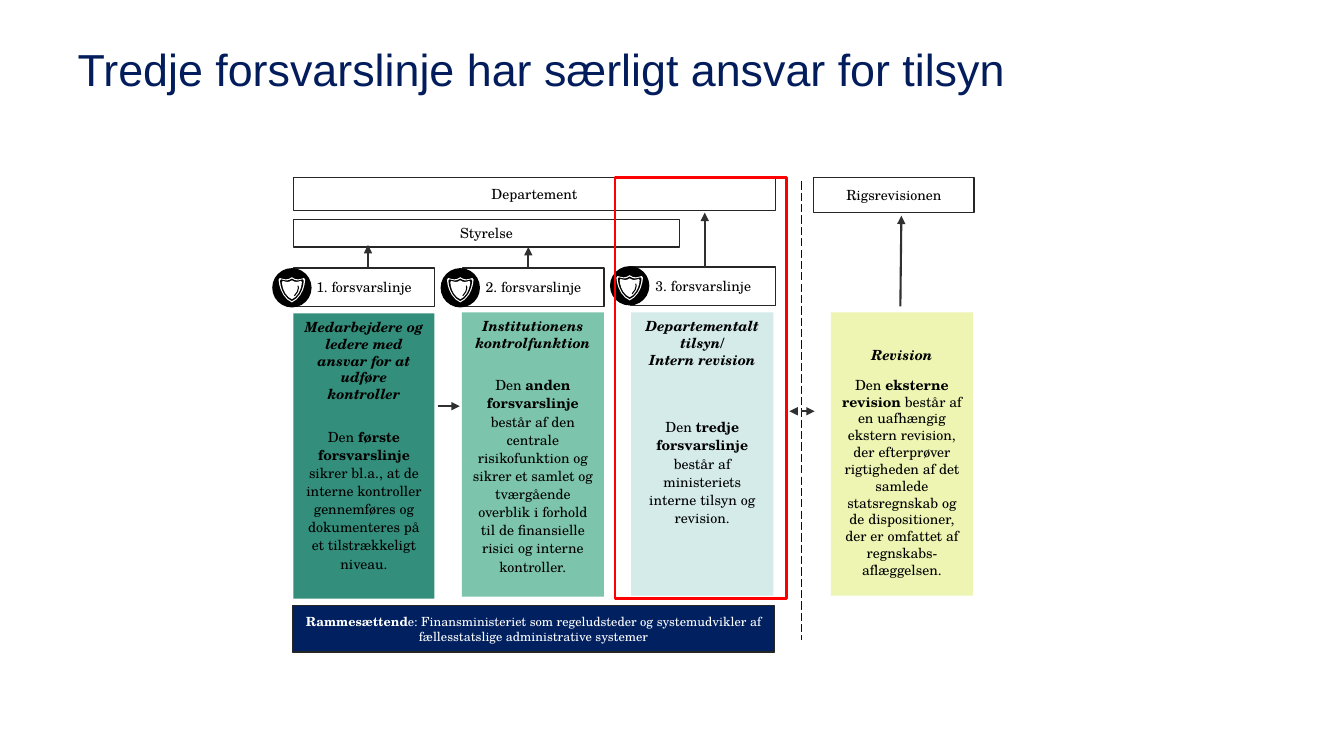
from lxml import etree
from pptx import Presentation
from pptx.dml.color import RGBColor
from pptx.enum import dml, shapes, text
from pptx.oxml.ns import qn
from pptx.util import Inches, Pt

# Content: places are left, top, width, height in inches
TITLE = "Tredje forsvarslinje har særligt ansvar for tilsyn"
AUTHORITIES = [
    ("Departement", (2.91, 1.76, 4.78, 0.33)),
    ("Styrelse", (2.91, 2.18, 3.83, 0.27)),
    ("Rigsrevisionen", (8.07, 1.76, 1.59, 0.35)),
]
DEFENCE_LINES = [
    ("1. forsvarslinje", (2.91, 2.66, 1.4, 0.38), (2.7, 2.66)),
    ("2. forsvarslinje", (4.59, 2.66, 1.4, 0.38), (4.37, 2.66)),
    ("3. forsvarslinje", (6.26, 2.65, 1.43, 0.38), (6.05, 2.64)),
]
# Heading, body runs, place, fill, top inset, gap in points, line spacing
COLUMNS = [
    ("Medarbejdere og ledere med ansvar for at udføre kontroller",
     ("Den ", "første forsvarslinje",
      " sikrer bl.a., at de interne kontroller gennemføres og dokumenteres "
      "på et tilstrækkeligt niveau."),
     (2.91, 3.11, 1.4, 2.83), "first", 0.05, 17.4, 1.08),
    ("Institutionens kontrolfunktion",
     ("Den ", "anden forsvarslinje ",
      "består af den centrale risikofunktion og sikrer et samlet og tværgående "
      "overblik i forhold til de finansielle risici og interne kontroller."),
     (4.58, 3.1, 1.41, 2.82), "second", 0.05, 17.4, 1.08),
    ("Departementalt tilsyn/\nIntern revision",
     ("Den ", "tredje forsvarslinje ",
      "består af ministeriets interne tilsyn og revision."),
     (6.26, 3.1, 1.41, 2.81), "third", 0.05, 35.4, 1.08),
    ("Revision",
     ("Den ", "eksterne revision ",
      "består af en uafhængig ekstern revision, der efterprøver rigtigheden af "
      "det samlede statsregnskab og de dispositioner, der er omfattet af "
      "regnskabs-aflæggelsen."),
     (8.24, 3.1, 1.41, 2.81), "external", 0.34, 9, 1.0),
]
FRAMEWORK = ("Rammesættend", "e: Finansministeriet som regeludsteder og systemudvikler "
             "af fællesstatslige administrative systemer")
FRAMEWORK_PLACE = (2.9, 6.01, 4.78, 0.46)
HIGHLIGHT_PLACE = (6.1, 1.76, 1.7, 4.18)
# Start, end, dash, arrowheads
ARROWS = [
    ((3.65, 2.66), (3.65, 2.43), None, ("tailEnd",)),
    ((5.24, 2.66), (5.24, 2.45), None, ("tailEnd",)),
    ((6.99, 2.65), (6.99, 2.11), None, ("tailEnd",)),
    ((8.93, 3.04), (8.94, 2.14), None, ("tailEnd",)),
    ((4.34, 4.03), (4.56, 4.03), None, ("tailEnd",)),
    ((8.08, 4.08), (7.83, 4.08), dml.MSO_LINE.SQUARE_DOT, ("headEnd", "tailEnd")),
]
DIVIDER = ((7.95, 1.8), (7.95, 6.35))
DISC = 0.39
# Right half of the shield, from its centre, top to bottom
SHIELD = [(0, -0.125), (0.03, -0.108), (0.06, -0.103), (0.09, -0.108), (0.12, -0.117),
          (0.132, -0.1), (0.125, -0.05), (0.11, 0), (0.085, 0.05), (0.045, 0.097),
          (0, 0.125)]
GLINT = [(0.06, -0.04), (0.065, -0.02), (0.055, 0.02), (0.025, 0.06)]

THEME = {
    "title_font": "Arial", "font": "TeX Gyre Schola",
    "title_size": 32, "size": 10, "small": 9,
    "title": "031D5C", "black": "000000", "white": "FFFFFF", "edge": "262626",
    "arrow": "303030", "divider": "0D0D0D", "navy": "002060", "red": "FF0000",
    "first": "00725C", "second": "7CC4AC", "third": "D4EBEA", "external": "EEF5B2",
}


def color(name):
    return RGBColor.from_string(THEME[name])


def assign(target, values):
    for name, value in values.items():
        setattr(target, name, value)


def paint(shape, fill=None, edge=None, width=1):
    shape.shadow.inherit = False
    if fill:
        shape.fill.solid()
        shape.fill.fore_color.rgb = color(fill)
    else:
        shape.fill.background()
    if edge:
        shape.line.color.rgb = color(edge)
        shape.line.width = Pt(width)
    else:
        shape.line.fill.background()
    return shape


def add_box(place, fill=None, edge=None, width=1, kind=shapes.MSO_SHAPE.RECTANGLE):
    box = slide.shapes.add_shape(kind, *map(Inches, place))
    return paint(box, fill, edge, width)


def write(paragraph, runs, ink="black", size="size", **spacing):
    """Each run is (wording, bold, italic)."""
    assign(paragraph, {"alignment": text.PP_ALIGN.CENTER, **spacing})
    for wording, bold, italic in runs:
        for number, line in enumerate(wording.split("\n")):
            if number:
                paragraph.add_line_break()
            run = paragraph.add_run()
            run.text = line
            assign(run.font, {"name": THEME["font"], "size": Pt(THEME[size]),
                              "bold": bold, "italic": italic})
            run.font.color.rgb = color(ink)


def add_label(place, runs, fill=None, **style):
    frame = add_box(place, fill, "edge").text_frame
    assign(frame, {"word_wrap": True, "vertical_anchor": text.MSO_ANCHOR.MIDDLE})
    write(frame.paragraphs[0], runs, **style)


def add_line(start, end, ink, width, dash=None, heads=()):
    line = slide.shapes.add_connector(shapes.MSO_CONNECTOR.STRAIGHT,
                                      *map(Inches, start + end))
    line.line.color.rgb = color(ink)
    assign(line.line, {"width": Pt(width), "dash_style": dash})
    for head in heads:
        etree.SubElement(line.line._get_or_add_ln(), qn("a:" + head), type="triangle")
    etree.SubElement(line._element.spPr, qn("a:effectLst"))


def add_outline(points, centre, closed):
    spots = [(Inches(centre[0] + x), Inches(centre[1] + y)) for x, y in points]
    builder = slide.shapes.build_freeform(*spots[0])
    builder.add_line_segments(spots[1:], close=closed)
    return builder.convert_to_shape()


def add_shield(left, top):
    add_box((left, top, DISC, DISC), "black", kind=shapes.MSO_SHAPE.OVAL)
    centre = (left + DISC / 2, top + DISC / 2 + 0.02)
    whole = SHIELD + [(-x, y) for x, y in SHIELD[-2:0:-1]]
    for scale, fill in ((1, "white"), (0.89, "black"), (0.75, "white")):
        layer = [(x * scale, y * scale) for x, y in whole]
        paint(add_outline(layer, centre, True), fill)
    paint(add_outline(GLINT, centre, False), None, "black", 0.75)


prs = Presentation()
assign(prs, {"slide_width": Inches(13.33), "slide_height": Inches(7.5)})
slide = prs.slides.add_slide(prs.slide_layouts[5])

# Title
title = slide.shapes.title
assign(title, dict(zip(("left", "top", "width", "height"),
                       map(Inches, (0.77, 0.47, 11.8, 0.79)))))
assign(title.text_frame, {"text": TITLE, "word_wrap": True,
                          "vertical_anchor": text.MSO_ANCHOR.TOP,
                          "margin_left": 0, "margin_right": 0,
                          "margin_top": 0, "margin_bottom": 0})
heading = title.text_frame.paragraphs[0]
assign(heading, {"alignment": text.PP_ALIGN.LEFT, "line_spacing": 0.9})
assign(heading.font, {"name": THEME["title_font"], "size": Pt(THEME["title_size"])})
heading.font.color.rgb = color("title")

# Authorities and the three lines of defence
for name, place in AUTHORITIES:
    add_label(place, [(name, False, False)])
for name, place, shield in DEFENCE_LINES:
    add_label(place, [(name, False, False)], "white")
    add_shield(*shield)

# Description columns
for role, (lead, key, rest), place, fill, inset, gap, spacing in COLUMNS:
    column = add_box(place, fill)
    if fill == "first":
        tint = column._element.spPr.find(".//" + qn("a:srgbClr"))
        etree.SubElement(tint, qn("a:alpha"), val="80000")
    frame = column.text_frame
    assign(frame, {"word_wrap": True, "vertical_anchor": text.MSO_ANCHOR.TOP,
                   "margin_top": Inches(inset)})
    write(frame.paragraphs[0], [(role, True, True)])
    write(frame.add_paragraph(),
          [(lead, False, False), (key, True, False), (rest, False, False)],
          space_before=Pt(gap), line_spacing=spacing)

# Divider and arrows
add_line(*DIVIDER, "divider", 0.75, dml.MSO_LINE.LONG_DASH)
for start, end, dash, heads in ARROWS:
    add_line(start, end, "arrow", 1.5, dash, heads)

# Framework bar and highlight
add_label(FRAMEWORK_PLACE, [(FRAMEWORK[0], True, False), (FRAMEWORK[1], False, False)],
          "navy", ink="white", size="small")
add_box(HIGHLIGHT_PLACE, None, "red", 2)

prs.save("out.pptx")
